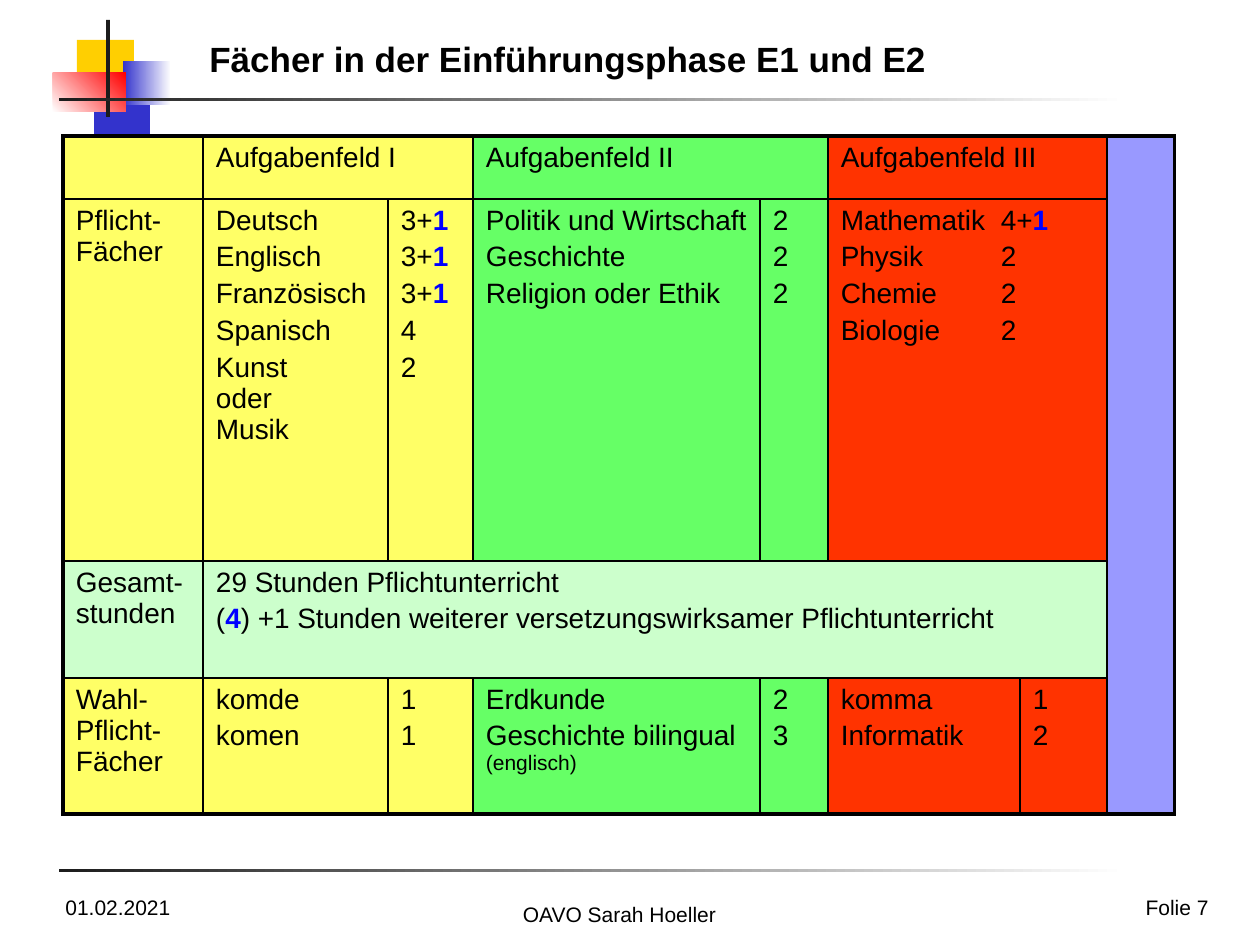
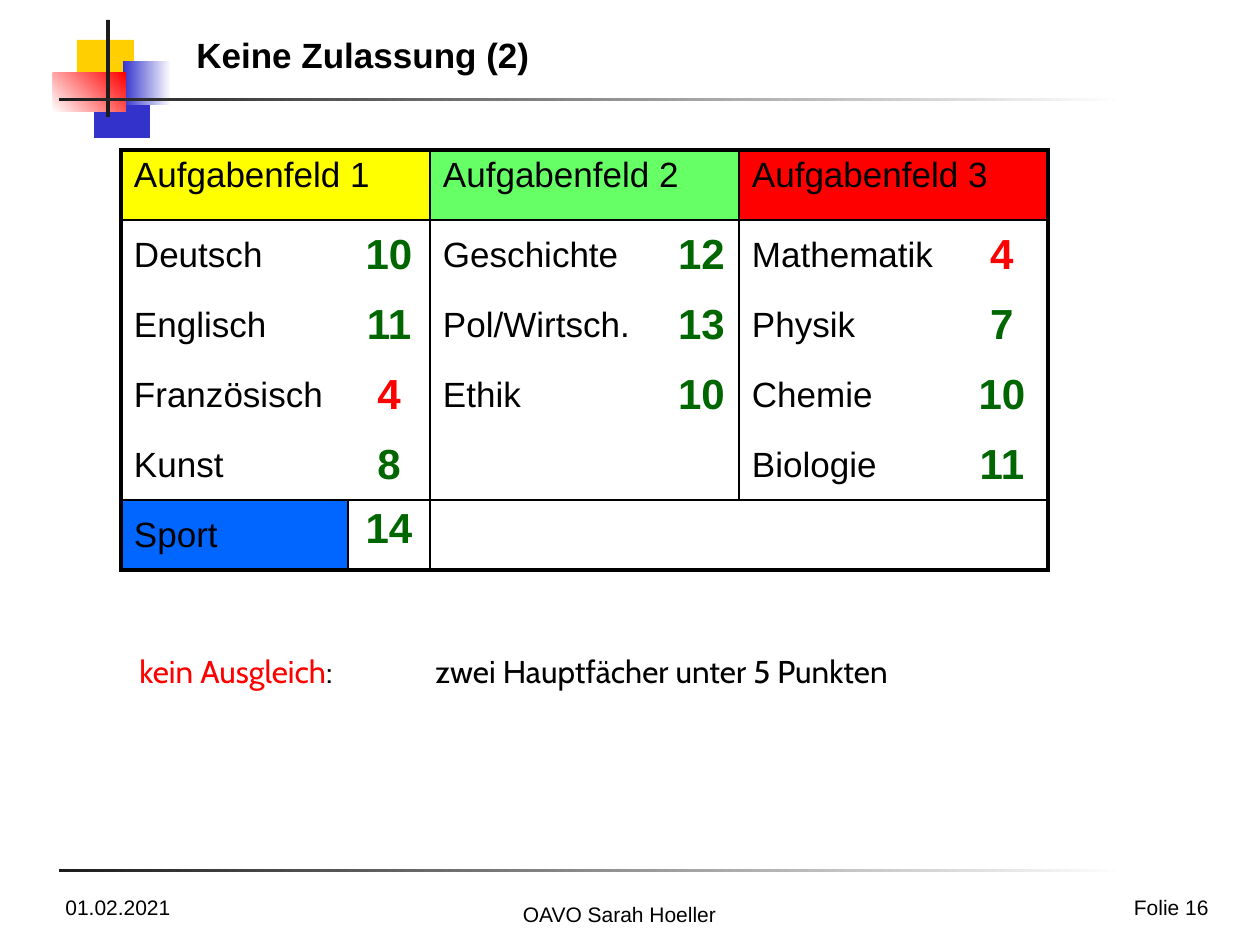
from collections import namedtuple
from dataclasses import dataclass

from lxml.etree import SubElement
from pptx import Presentation
from pptx.dml.color import RGBColor
from pptx.enum.shapes import MSO_SHAPE
from pptx.enum.text import MSO_ANCHOR, PP_ALIGN
from pptx.oxml import parse_xml
from pptx.oxml.ns import nsdecls, qn
from pptx.util import Pt

EMU_PER_PX = 914400 / 126
Box = namedtuple("Box", "x y w h")


@dataclass(frozen=True)
class Theme:
    font: str = "Arial"
    note_font: str = "Cabin"
    black: str = "000000"
    white: str = "FFFFFF"
    ink: str = "1C1C1C"
    gold: str = "FFCF01"
    navy: str = "3333CC"
    red: str = "FF0000"
    blue: str = "0000FF"
    yellow: str = "FFFF00"
    soft_yellow: str = "FFFF66"
    green: str = "66FF66"
    pale_green: str = "CCFFCC"
    dark_green: str = "006600"
    orange: str = "FF3300"
    lilac: str = "9999FF"
    sport_blue: str = "0066FF"
    title: int = 20
    footer: int = 12
    subject: int = 16
    small: int = 12
    field: int = 20
    grade: int = 24
    note: int = 18
    outer_line: float = 2.25
    inner_line: float = 1


T = Theme()
PAGE = Box(0, 0, 1260, 945)


def px(n):
    return round(n * EMU_PER_PX)


def inside(box, x, y, w, h):
    return Box(box.x + x, box.y + y, w, h)


def rgb(color):
    return RGBColor.from_string(color)


def write_text(tf, paras, size=T.subject, color=T.black, bold=False, font=T.font,
               align=PP_ALIGN.LEFT, space=0.2, tab=None, hanging=0):
    tf.word_wrap = True
    for i, runs in enumerate(paras):
        p = tf.paragraphs[0] if i == 0 else tf.add_paragraph()
        p.alignment = align
        pPr = p._p.get_or_add_pPr()
        if hanging:
            pPr.set("marL", str(px(hanging)))
            pPr.set("indent", str(-px(hanging)))
        if i:
            p.space_before = Pt(round(size * space, 1))
        if tab:
            tabs = SubElement(pPr, qn("a:tabLst"))
            SubElement(tabs, qn("a:tab"), pos=str(px(tab)), algn="l")
        for run in [runs] if isinstance(runs, str) else runs:
            text, style = (run, {}) if isinstance(run, str) else run
            for n, line in enumerate(text.split("\n")):
                if n:
                    p.add_line_break()
                r = p.add_run()
                r.text = line
                r.font.name = font
                r.font.size = Pt(style.get("size", size))
                r.font.bold = style.get("bold", bold)
                r.font.color.rgb = rgb(style.get("color", color))


def add_text(s, box, paras, anchor=MSO_ANCHOR.TOP, **fmt):
    sp = s.shapes.add_textbox(*map(px, box))
    sp.text_frame.vertical_anchor = anchor
    write_text(sp.text_frame, paras, **fmt)
    return sp


def add_rect(s, box, start, end=None, angle=0):
    sp = s.shapes.add_shape(MSO_SHAPE.RECTANGLE, *map(px, box))
    sp.shadow.inherit = False
    sp.line.fill.background()
    if end is None:
        sp.fill.solid()
        sp.fill.fore_color.rgb = rgb(start)
        return
    sp.fill.gradient()
    sp.fill.gradient_angle = angle
    for stop, color in zip(sp.fill.gradient_stops, (start, end)):
        stop.color.rgb = rgb(color)


def add_ornament(s, box):
    add_rect(s, inside(box, 24, 20, 57, 44), T.gold)
    add_rect(s, inside(box, 54, 71, 43, 44), T.gold, T.white)
    add_rect(s, inside(box, 41, 74, 56, 44), T.navy)
    add_rect(s, inside(box, 70, 41, 48, 44), T.navy, T.white)
    add_rect(s, inside(box, 0, 53, 73, 39), T.white, T.red, angle=45)
    add_rect(s, inside(box, 53, 0, 4, 97), T.ink)


def add_rule(s, box):
    add_rect(s, box, T.ink, T.white)


def add_footer(s, box, number):
    add_rule(s, inside(box, 6, 0, 1067, 3))
    add_text(s, inside(box, 874, 19, 294, 28), [f"Folie {number}"],
             size=T.footer, align=PP_ALIGN.RIGHT)
    add_text(s, inside(box, 0, 19, 294, 38), ["01.02.2021"], size=T.footer)
    add_text(s, inside(box, 367, 26, 399, 30), ["OAVO Sarah Hoeller"],
             size=T.footer, align=PP_ALIGN.CENTER)


def add_frame(prs, title, title_box, number):
    s = prs.slides.add_slide(prs.slide_layouts[6])
    add_ornament(s, inside(PAGE, 53, 20, 118, 118))
    add_rule(s, inside(PAGE, 59, 98, 1067, 3))
    add_footer(s, inside(PAGE, 53, 869, 1168, 57), number)
    sp = add_text(s, title_box, [title], anchor=MSO_ANCHOR.BOTTOM,
                  size=T.title, bold=True)
    sp.fill.solid()
    sp.fill.fore_color.rgb = rgb(T.white)
    return s


def add_grid(s, box, cols, rows):
    frame = s.shapes.add_table(len(rows), len(cols), *map(px, box))
    table = frame.table
    table.first_row = table.horz_banding = False
    for col, width in zip(table.columns, cols):
        col.width = px(width)
    for row, height in zip(table.rows, rows):
        row.height = px(height)
    return table


def fill_cell(table, row, col, fill=None, paras=(), span=1,
              anchor=MSO_ANCHOR.TOP, **fmt):
    cell = table.cell(row, col)
    if span > 1:
        cell.merge(table.cell(row, col + span - 1))
    if fill:
        cell.fill.solid()
        cell.fill.fore_color.rgb = rgb(fill)
    else:
        cell.fill.background()
    cell.margin_left = cell.margin_right = px(13)
    cell.margin_top = cell.margin_bottom = px(6)
    cell.vertical_anchor = anchor
    write_text(cell.text_frame, paras, **fmt)


def rule_cells(table, v_edges, h_edges):
    n_rows, n_cols = len(table.rows), len(table.columns)

    def width(edge, last, inner):
        if edge in (0, last):
            return T.outer_line
        return T.inner_line if edge in inner else 0

    for r in range(n_rows):
        for c in range(n_cols):
            cell = table.cell(r, c)
            right = c + (cell.span_width if cell.is_merge_origin else 1)
            widths = {
                "L": width(c, n_cols, v_edges[r]),
                "R": width(right, n_cols, v_edges[r]),
                "T": width(r, n_rows, h_edges[c]),
                "B": width(r + 1, n_rows, h_edges[c]),
            }
            tcPr = cell._tc.get_or_add_tcPr()
            for i, (side, pt) in enumerate(widths.items()):
                paint = (f'<a:solidFill><a:srgbClr val="{T.black}"/></a:solidFill>'
                         if pt else "<a:noFill/>")
                tcPr.insert(i, parse_xml(
                    f'<a:ln{side} {nsdecls("a")} w="{Pt(pt)}">{paint}</a:ln{side}>'))


def add_subject_table(s, box):
    table = add_grid(s, box, [140, 185, 85, 287, 68, 192, 87, 68],
                     [63, 362, 117, 136])
    extra = {"color": T.blue, "bold": True}
    plus_one = ["3+", ("1", extra)]
    cells = [
        (0, 0, 1, T.soft_yellow, []),
        (0, 1, 2, T.soft_yellow, ["Aufgabenfeld I"]),
        (0, 3, 2, T.green, ["Aufgabenfeld II"]),
        (0, 5, 2, T.orange, ["Aufgabenfeld III"]),
        (1, 0, 1, T.soft_yellow, ["Pflicht-Fächer"]),
        (1, 1, 1, T.soft_yellow, ["Deutsch", "Englisch", "Französisch",
                                  "Spanisch", "Kunst\noder\nMusik"]),
        (1, 2, 1, T.soft_yellow, [plus_one] * 3 + ["4", "2"]),
        (1, 3, 1, T.green, ["Politik und Wirtschaft", "Geschichte",
                            "Religion oder Ethik"]),
        (1, 4, 1, T.green, ["2"] * 3),
        (1, 5, 2, T.orange, [["Mathematik\t4+", ("1", extra)], "Physik\t2",
                             "Chemie\t2", "Biologie\t2"]),
        (2, 0, 1, T.pale_green, ["Gesamt-stunden"]),
        (2, 1, 6, T.pale_green, [
            "29 Stunden Pflichtunterricht",
            ["(", ("4", extra),
             ") +1 Stunden weiterer versetzungswirksamer Pflichtunterricht"]]),
        (3, 0, 1, T.soft_yellow, ["Wahl-Pflicht-Fächer"]),
        (3, 1, 1, T.soft_yellow, ["komde", "komen"]),
        (3, 2, 1, T.soft_yellow, ["1", "1"]),
        (3, 3, 1, T.green, ["Erdkunde", ["Geschichte bilingual ",
                                         ("(englisch)", {"size": T.small})]]),
        (3, 4, 1, T.green, ["2", "3"]),
        (3, 5, 1, T.orange, ["komma", "Informatik"]),
        (3, 6, 1, T.orange, ["1", "2"]),
    ] + [(row, 7, 1, T.lilac, []) for row in range(4)]
    for row, col, span, fill, paras in cells:
        fill_cell(table, row, col, fill, paras, span=span,
                  tab=160 if (row, col) == (1, 5) else None)
    rule_cells(table, [{1, 3, 5, 7}, {1, 2, 3, 4, 5, 7}, {1, 7}, set(range(1, 8))],
               [{1, 2, 3}] * 7 + [set()])


def add_grade_table(s, box):
    table = add_grid(s, box, [227, 82, 234, 75, 217, 92], [70] * 6)
    fields = [
        ("Aufgabenfeld 1", T.yellow, [("Deutsch", 10), ("Englisch", 11),
                                      ("Französisch", 4), ("Kunst", 8), ("Sport", 14)]),
        ("Aufgabenfeld 2", T.green, [("Geschichte", 12), ("Pol/Wirtsch.", 13),
                                     ("Ethik", 10)]),
        ("Aufgabenfeld 3", T.red, [("Mathematik", 4), ("Physik", 7),
                                   ("Chemie", 10), ("Biologie", 11)]),
    ]
    for i, (name, fill, grades) in enumerate(fields):
        col = 2 * i
        fill_cell(table, 0, col, fill, [name], span=2, size=T.field)
        for row in range(1, 6):
            if row > len(grades):
                fill_cell(table, row, col)
                fill_cell(table, row, col + 1)
                continue
            subject, points = grades[row - 1]
            sport = subject == "Sport"
            fill_cell(table, row, col, T.sport_blue if sport else None, [subject],
                      anchor=MSO_ANCHOR.MIDDLE, size=T.field)
            fill_cell(table, row, col + 1, None, [str(points)],
                      anchor=MSO_ANCHOR.TOP if sport else MSO_ANCHOR.MIDDLE,
                      size=T.grade, bold=True, align=PP_ALIGN.CENTER,
                      color=T.red if points < 5 else T.dark_green)
    rule_cells(table, [{2, 4}] * 5 + [{1, 2}], [{1, 5}] * 6)


def build_subjects_slide(prs):
    s = add_frame(prs, "Fächer in der Einführungsphase E1 und E2",
                  inside(PAGE, 197, 33, 843, 53), 7)
    add_subject_table(s, inside(PAGE, 63, 136, 1112, 678))


def build_admission_slide(prs):
    s = add_frame(prs, "Keine Zulassung (2)", inside(PAGE, 184, 39, 906, 43), 16)
    add_grade_table(s, inside(PAGE, 121, 150, 927, 420))
    add_text(s, inside(PAGE, 127, 646, 924, 50),
             [[("kein Ausgleich", {"color": T.red}),
               ": \tzwei Hauptfächer unter 5 Punkten"]],
             size=T.note, font=T.note_font, hanging=296)


def main():
    prs = Presentation()
    prs.slide_width, prs.slide_height = px(PAGE.w), px(PAGE.h)
    build_subjects_slide(prs)
    build_admission_slide(prs)
    prs.save("out.pptx")


if __name__ == "__main__":
    main()
